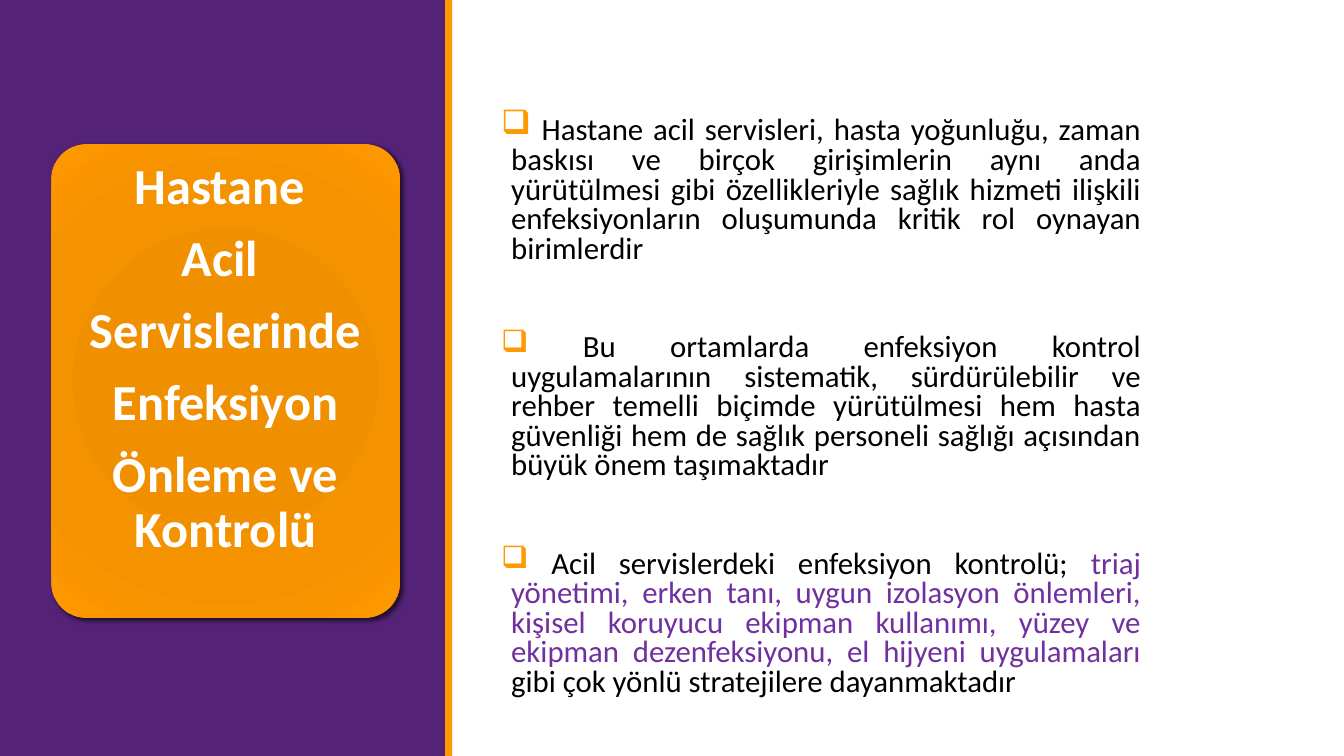
from lxml import etree
from pptx import Presentation
from pptx.dml.color import RGBColor
from pptx.enum.shapes import MSO_SHAPE
from pptx.enum.text import MSO_ANCHOR, PP_ALIGN
from pptx.oxml import parse_xml
from pptx.oxml.ns import nsdecls, qn
from pptx.util import Pt

RECTANGLE = MSO_SHAPE.RECTANGLE
ROUNDED = MSO_SHAPE.ROUNDED_RECTANGLE
TOP = MSO_ANCHOR.TOP
CENTER = PP_ALIGN.CENTER
JUSTIFY = PP_ALIGN.JUSTIFY

PURPLE = RGBColor(0x54, 0x23, 0x78)
ORANGE = RGBColor(0xFF, 0x99, 0x00)
WHITE = RGBColor(0xFF, 0xFF, 0xFF)
BLACK = RGBColor(0x00, 0x00, 0x00)
VIOLET = RGBColor(0x70, 0x30, 0xA0)
CARD_STOPS = [
    (0, RGBColor(0xEE, 0x8F, 0x00)),
    (34, RGBColor(0xF0, 0x90, 0x00)),
    (70, RGBColor(0xF4, 0x92, 0x00)),
    (100, ORANGE),
]
FONT = "Calibri"

TITLE_LINES = ["Hastane ", "Acil ", "Servislerinde", "Enfeksiyon", "Önleme ve Kontrolü"]
BULLETS = [
    [
        (" ", 24, BLACK),
        ("Hastane acil servisleri, hasta yoğunluğu, zaman baskısı ve birçok girişimlerin "
         "aynı anda yürütülmesi gibi özellikleriyle sağlık hizmeti ilişkili enfeksiyonların "
         "oluşumunda kritik rol oynayan birimlerdir", 22, BLACK),
    ],
    [
        (" Bu ortamlarda enfeksiyon kontrol uygulamalarının sistematik, sürdürülebilir ve "
         "rehber temelli biçimde yürütülmesi hem hasta güvenliği hem de sağlık personeli "
         "sağlığı açısından büyük önem taşımaktadır", 22, BLACK),
    ],
    [
        (" Acil servislerdeki enfeksiyon kontrolü; ", 22, BLACK),
        ("triaj yönetimi, erken tanı, uygun izolasyon önlemleri, kişisel koruyucu ekipman "
         "kullanımı, yüzey ve ekipman dezenfeksiyonu, el hijyeni uygulamaları ", 22, VIOLET),
        ("gibi çok yönlü stratejilere dayanmaktadır", 22, BLACK),
    ],
]


def add_block(slide, kind, left, top, width, height, color):
    shape = slide.shapes.add_shape(kind, Pt(left), Pt(top), Pt(width), Pt(height))
    shape.shadow.inherit = False
    shape.fill.solid()
    shape.fill.fore_color.rgb = color
    shape.line.fill.background()
    return shape


def add_text_frame(slide, left, top, width, height, side, edge):
    box = slide.shapes.add_textbox(Pt(left), Pt(top), Pt(width), Pt(height))
    frame = box.text_frame
    frame.word_wrap = True
    frame.vertical_anchor = TOP
    frame.margin_left = frame.margin_right = Pt(side)
    frame.margin_top = frame.margin_bottom = Pt(edge)
    return frame


def style_card(shape):
    stops = "".join(
        f'<a:gs pos="{position * 1000}"><a:srgbClr val="{color}"/></a:gs>'
        for position, color in CARD_STOPS
    )
    gradient = parse_xml(
        f'<a:gradFill {nsdecls("a")} rotWithShape="1"><a:gsLst>{stops}</a:gsLst>'
        '<a:path path="circle"><a:fillToRect l="100000" t="100000" r="100000" b="100000"/>'
        "</a:path></a:gradFill>"
    )
    shadow = parse_xml(
        f'<a:outerShdw {nsdecls("a")} blurRad="{Pt(3)}" dist="{Pt(2)}" dir="2700000" '
        'rotWithShape="0"><a:srgbClr val="000000"><a:alpha val="60000"/></a:srgbClr></a:outerShdw>'
    )
    properties = shape._element.spPr
    properties.replace(properties.find(qn("a:solidFill")), gradient)
    properties.find(qn("a:effectLst")).append(shadow)


def add_bullet(paragraph):
    properties = paragraph._p.get_or_add_pPr()
    properties.set("marL", str(Pt(7.2)))
    properties.set("indent", str(-Pt(7.2)))
    color = etree.SubElement(properties, qn("a:buClr"))
    etree.SubElement(color, qn("a:srgbClr"), val=str(ORANGE))
    etree.SubElement(properties, qn("a:buChar"), char="❑")


def add_side_panel(slide, left, top, width, height):
    stripe = 5
    add_block(slide, RECTANGLE, left, top, width - stripe, height, PURPLE)
    add_block(slide, RECTANGLE, left + width - stripe, top, stripe, height, ORANGE)


def add_title_card(slide, left, top, width, height):
    card = add_block(slide, ROUNDED, left, top, width, height, ORANGE)
    card.adjustments[0] = 0.1
    style_card(card)
    frame = add_text_frame(slide, left + 7, top + 10.5, width - 14, height - 21, 2, 1.5)
    frame.text = "\n".join(TITLE_LINES)
    for paragraph in frame.paragraphs:
        paragraph.alignment = CENTER
        paragraph.line_spacing = 0.9
        paragraph.space_after = Pt(12.6)
        font = paragraph.runs[0].font
        font.name, font.size, font.bold = FONT, Pt(36), True
        font.color.rgb = WHITE


def add_body(slide, left, top, width, height):
    frame = add_text_frame(slide, left, top, width, height, 0, 3.6)
    for index, pieces in enumerate(BULLETS):
        paragraph = frame.add_paragraph() if index else frame.paragraphs[0]
        add_bullet(paragraph)
        paragraph.alignment = JUSTIFY
        paragraph.line_spacing = 0.8
        paragraph.space_before = Pt(47 if index else 0)
        paragraph.space_after = Pt(2)
        for text, size, color in pieces:
            run = paragraph.add_run()
            run.text = text
            run.font.name, run.font.size = FONT, Pt(size)
            run.font.color.rgb = color


def main():
    presentation = Presentation()
    presentation.slide_width = Pt(960)
    presentation.slide_height = Pt(540)
    slide = presentation.slides.add_slide(presentation.slide_layouts[6])
    add_side_panel(slide, 0, 0, 323, 540)
    add_title_card(slide, 36.7, 103, 249, 338.4)
    add_body(slide, 358, 78.5, 457, 429)
    presentation.save("out.pptx")


if __name__ == "__main__":
    main()
